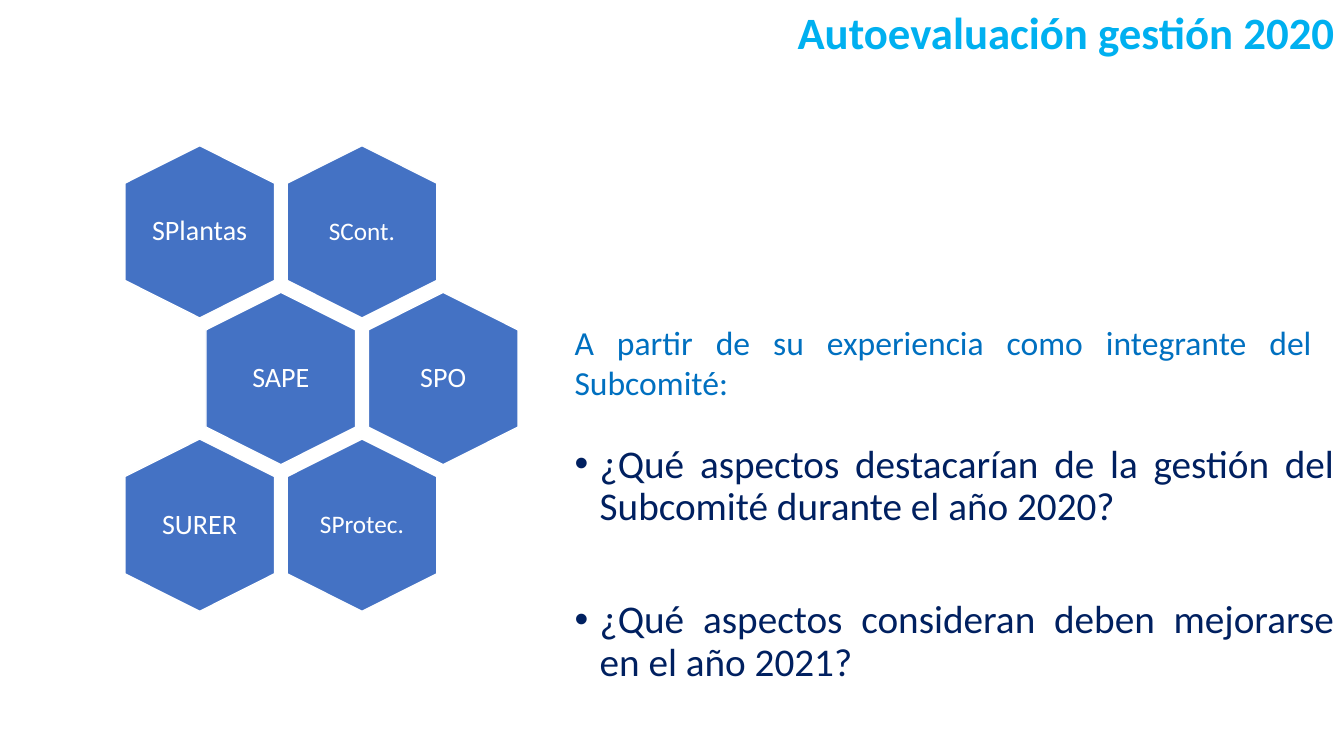
from dataclasses import dataclass

from lxml.etree import SubElement
from pptx import Presentation
from pptx.dml.color import RGBColor
from pptx.enum.shapes import MSO_SHAPE
from pptx.enum.text import MSO_ANCHOR, MSO_AUTO_SIZE, PP_ALIGN
from pptx.oxml.ns import qn
from pptx.util import Inches, Pt


@dataclass(frozen=True)
class Theme:
    font: str = "Calibri"
    white: str = "FFFFFF"
    title_color: str = "00B0F0"
    intro_color: str = "0070C0"
    question_color: str = "002060"
    hexagon_color: str = "4472C4"
    title_size: int = 32
    question_size: int = 28
    intro_size: int = 24
    label_size: int = 20
    small_label_size: int = 18


THEME = Theme()

HEXAGON_WIDTH, HEXAGON_HEIGHT = 1.71, 1.49
LABEL_WIDTH, LABEL_HEIGHT = 1.02, 1.18
FIRST_CENTER_X, FIRST_CENTER_Y = 1.98, 2.3
COLUMN_STEP, ROW_STEP = 1.61, 1.455

SUBCOMMITTEES = [
    [("SPlantas", THEME.label_size), ("SCont.", THEME.small_label_size)],
    [("SAPE", THEME.label_size), ("SPO", THEME.label_size)],
    [("SURER", THEME.label_size), ("SProtec.", THEME.small_label_size)],
]

INTRO = "A partir de su experiencia como integrante del Subcomité:"
QUESTIONS = [
    ("¿Qué aspectos destacarían de la gestión del Subcomité durante el año 2020?", 10),
    ("¿Qué aspectos consideran deben mejorarse en el año 2021?", 50.7),
]


def write_text(para, text, *, size, color, align, bold=False, line_spacing=1.0, before=0):
    para.alignment = align
    para.line_spacing = line_spacing
    para.space_before = Pt(before)
    span = para.add_run()
    span.text = text
    span.font.name = THEME.font
    span.font.size = Pt(size)
    span.font.bold = bold
    span.font.color.rgb = RGBColor.from_string(color)


def add_bullet(para):
    properties = para._p.get_or_add_pPr()
    properties.set("marL", str(Inches(0.25)))
    properties.set("indent", str(Inches(-0.25)))
    SubElement(properties, qn("a:buFont"), typeface="Arial")
    SubElement(properties, qn("a:buChar"), char="•")


def add_text_box(page, left, top, width, height):
    box = page.shapes.add_textbox(Inches(left), Inches(top), Inches(width), Inches(height))
    box.text_frame.word_wrap = True
    return box.text_frame


def add_title(page, text):
    title = page.shapes.title
    title.left, title.top = Inches(1.35), Inches(0)
    title.width, title.height = Inches(11.99), Inches(0.64)
    frame = title.text_frame
    frame.auto_size = MSO_AUTO_SIZE.NONE
    frame.vertical_anchor = MSO_ANCHOR.TOP
    write_text(frame.paragraphs[0], text, size=THEME.title_size,
               color=THEME.title_color, align=PP_ALIGN.RIGHT, bold=True)


def add_hexagon(page, center_x, center_y, text, size):
    hexagon = page.shapes.add_shape(
        MSO_SHAPE.HEXAGON,
        Inches(center_x - HEXAGON_WIDTH / 2), Inches(center_y - HEXAGON_HEIGHT / 2),
        Inches(HEXAGON_WIDTH), Inches(HEXAGON_HEIGHT))
    hexagon.rotation = 90
    hexagon.adjustments[0] = 0.25
    hexagon.adjustments[1] = 1.15
    hexagon.shadow.inherit = False
    hexagon.fill.solid()
    hexagon.fill.fore_color.rgb = RGBColor.from_string(THEME.hexagon_color)
    hexagon.line.color.rgb = RGBColor.from_string(THEME.white)
    hexagon.line.width = Pt(1)

    frame = add_text_box(page, center_x - LABEL_WIDTH / 2, center_y - LABEL_HEIGHT / 2,
                         LABEL_WIDTH, LABEL_HEIGHT)
    frame.margin_left = frame.margin_right = frame.margin_top = frame.margin_bottom = 0
    frame.vertical_anchor = MSO_ANCHOR.MIDDLE
    write_text(frame.paragraphs[0], text, size=size, color=THEME.white,
               align=PP_ALIGN.CENTER, line_spacing=0.9)


def add_honeycomb(page):
    for row, labels in enumerate(SUBCOMMITTEES):
        shift = COLUMN_STEP / 2 * (row % 2)
        for column, (text, size) in enumerate(labels):
            add_hexagon(page, FIRST_CENTER_X + shift + column * COLUMN_STEP,
                        FIRST_CENTER_Y + row * ROW_STEP, text, size)


def add_intro(page):
    frame = add_text_box(page, 5.6, 3.14, 7.51, 0.91)
    write_text(frame.paragraphs[0], INTRO, size=THEME.intro_size,
               color=THEME.intro_color, align=PP_ALIGN.JUSTIFY)


def add_questions(page):
    frame = add_text_box(page, 5.6, 4.36, 7.73, 2.56)
    for index, (text, before) in enumerate(QUESTIONS):
        para = frame.add_paragraph() if index else frame.paragraphs[0]
        write_text(para, text, size=THEME.question_size, color=THEME.question_color,
                   align=PP_ALIGN.JUSTIFY, line_spacing=0.9, before=before)
        add_bullet(para)


def main():
    deck = Presentation()
    deck.slide_width, deck.slide_height = Inches(13.33), Inches(7.5)
    page = deck.slides.add_slide(deck.slide_layouts[5])
    page.background.fill.solid()
    page.background.fill.fore_color.rgb = RGBColor.from_string(THEME.white)
    add_title(page, "Autoevaluación gestión 2020")
    add_honeycomb(page)
    add_intro(page)
    add_questions(page)
    deck.save("out.pptx")


if __name__ == "__main__":
    main()
